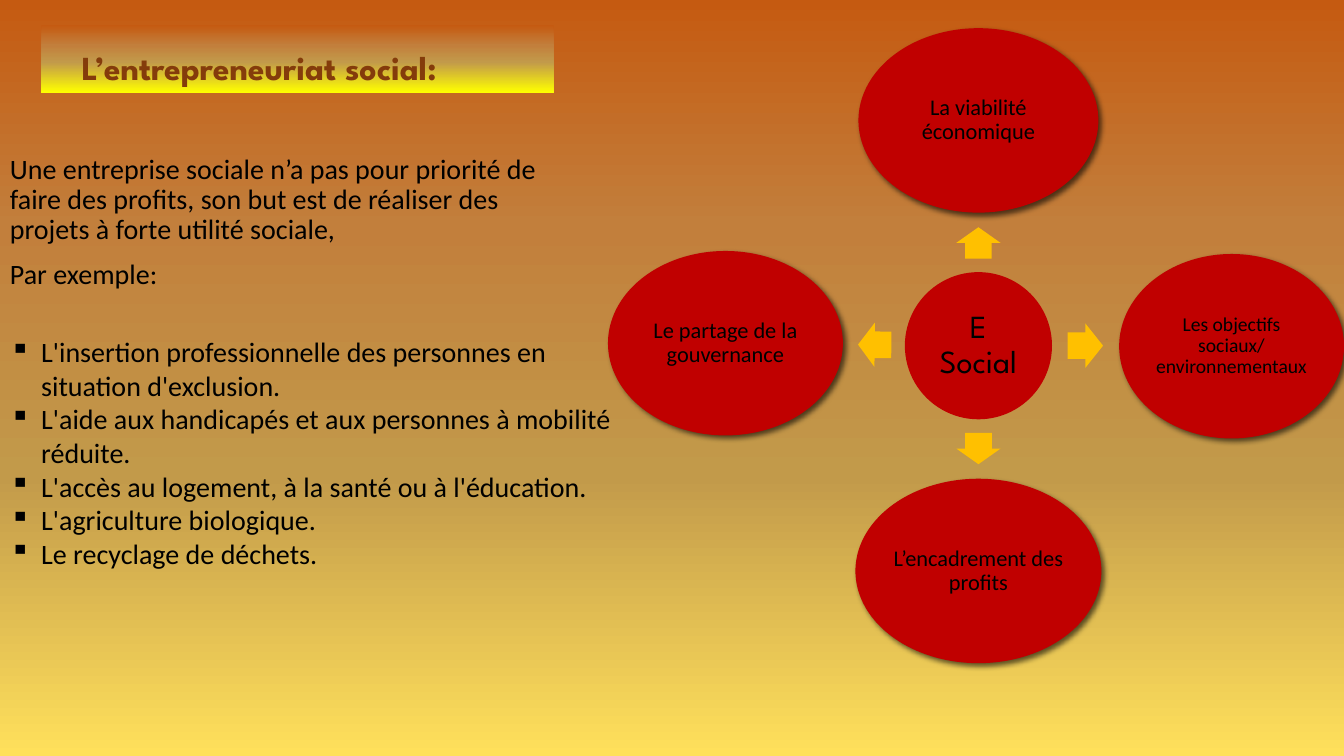
from pptx import Presentation
from pptx.dml.color import RGBColor
from pptx.enum.shapes import MSO_SHAPE
from pptx.enum.text import MSO_ANCHOR, PP_ALIGN
from pptx.oxml import parse_xml
from pptx.oxml.ns import nsdecls, qn
from pptx.util import Inches, Pt

HUES = {"rust": "C55A11", "clay": "C27F3C", "sand": "C29A4A", "sun": "FFE05B",
        "lemon": "FFFF00", "brown": "843C0B", "ink": "000000",
        "red": "C00000", "gold": "FFC000"}

deck = Presentation()
deck.slide_width, deck.slide_height = Inches(13.33), Inches(7.5)
slide = deck.slides.add_slide(deck.slide_layouts[6])
shapes = slide.shapes


def box(left, top, wide, high):
    return [int(share * side / 100) for share, side in
            zip((left, top, wide, high), (deck.slide_width, deck.slide_height) * 2)]


def write(frame, lines, size, hue="ink", face="Calibri", bold=False, form={}):
    frame.word_wrap = True
    frame.text = "\n".join(lines)
    for para in frame.paragraphs:
        for name, value in form.items():
            setattr(para, name, value)
        look = {"size": Pt(size), "name": face, "bold": bold}
        for run in para.runs:
            for name, value in look.items():
                setattr(run.font, name, value)
            run.font.color.rgb = RGBColor.from_string(HUES[hue])


title = shapes.add_shape(MSO_SHAPE.RECTANGLE, *box(3.08, 3.33, 38.11, 8.93))
title.shadow.inherit = False
title.line.fill.background()
fades = [
    (slide.background.fill, slide.element.cSld,
     [("rust", 0), ("clay", 30), ("sand", 63), ("sun", 100)]),
    (title.fill, title.element,
     [("rust", 0), ("clay", 30), ("sand", 55), ("lemon", 100)]),
]
for fill, node, stops in fades:
    fill.gradient()
    fill.gradient_angle = 270
    ramp = next(node.iter(qn("a:gsLst")))
    for old in list(ramp):
        ramp.remove(old)
    for hue, spot in stops:
        ramp.append(parse_xml(
            f'<a:gs {nsdecls("a")} pos="{spot * 1000}">'
            f'<a:srgbClr val="{HUES[hue]}"/></a:gs>'))

title.text_frame.vertical_anchor = MSO_ANCHOR.BOTTOM
title.text_frame.margin_left = Inches(0.4)
write(title.text_frame, ["L’entrepreneuriat social:"], 24, "brown", "League Spartan", True,
      {"alignment": PP_ALIGN.LEFT, "line_spacing": 0.9})

intro = shapes.add_textbox(*box(0, 19.87, 41.19, 80.13))
write(intro.text_frame, [
    "Une entreprise sociale n’a pas pour priorité de faire des profits, "
    "son but est de réaliser des projets à forte utilité sociale,",
    "Par exemple:",
], 20, form={"line_spacing": 0.9, "space_before": Pt(10)})

goals = [
    ("La viabilité économique", 16, 72.8, 15.93, 17.85, 24.4),
    ("Les objectifs sociaux/ environnementaux", 14, 91.64, 45.8, 16.73, 24.4),
    ("L’encadrement des profits", 16, 72.8, 75.53, 18.3, 24.4),
    ("Le partage de la gouvernance", 16, 53.98, 45.4, 17.48, 24.4),
    ("E Social", 23, 72.8, 45.73, 10.95, 19.47),
]
for text, size, mid, row, wide, high in goals:
    hub = text == "E Social"
    disc = shapes.add_shape(MSO_SHAPE.OVAL, *box(mid - wide / 2, row - high / 2, wide, high))
    disc.shadow.inherit = False
    disc.fill.solid()
    disc.fill.fore_color.rgb = RGBColor.from_string(HUES["red"])
    disc.line.fill.background()
    if not hub:
        disc.element.spPr.find(qn("a:effectLst")).append(parse_xml(
            f'<a:outerShdw {nsdecls("a")} blurRad="{Pt(4)}" dist="{Pt(3)}" dir="2700000">'
            f'<a:srgbClr val="{HUES["ink"]}"><a:alpha val="60000"/></a:srgbClr>'
            '</a:outerShdw>'))
    frame = disc.text_frame
    for side in ("left", "top", "right", "bottom"):
        setattr(frame, f"margin_{side}", Inches(0.03 if hub else 0.02))
    frame.vertical_anchor = MSO_ANCHOR.MIDDLE
    write(frame, [text], size, face="League Spartan" if hub else "Calibri",
          form={"alignment": PP_ALIGN.CENTER, "line_spacing": 0.9})

arrows = [(72.8, 32.13, 2.33, 270), (80.76, 45.73, 2.63, 0),
          (72.8, 59.33, 2.33, 90), (65.08, 45.6, 2.48, 180.6)]
for mid, row, wide, turn in arrows:
    arrow = shapes.add_shape(MSO_SHAPE.RIGHT_ARROW,
                             *box(mid - wide / 2, row - 5.87 / 2, wide, 5.87))
    arrow.shadow.inherit = False
    arrow.adjustments[0] = 0.6
    arrow.rotation = turn
    arrow.fill.solid()
    arrow.fill.fore_color.rgb = RGBColor.from_string(HUES["gold"])
    arrow.line.fill.background()

cases = shapes.add_textbox(*box(0, 43.6, 50.04, 32.8))
write(cases.text_frame, [
    "L'insertion professionnelle des personnes en\vsituation d'exclusion.",
    "L'aide aux handicapés et aux personnes à mobilité réduite.",
    "L'accès au logement, à la santé ou à l'éducation.",
    "L'agriculture biologique.",
    "Le recyclage de déchets.",
], 20)
for para in cases.text_frame.paragraphs:
    props = para._p.get_or_add_pPr()
    props.set("marL", str(Inches(0.31)))
    props.set("indent", str(-Inches(0.31)))
    props.append(parse_xml(f'<a:buChar {nsdecls("a")} char="▪"/>'))

deck.save("out.pptx")
